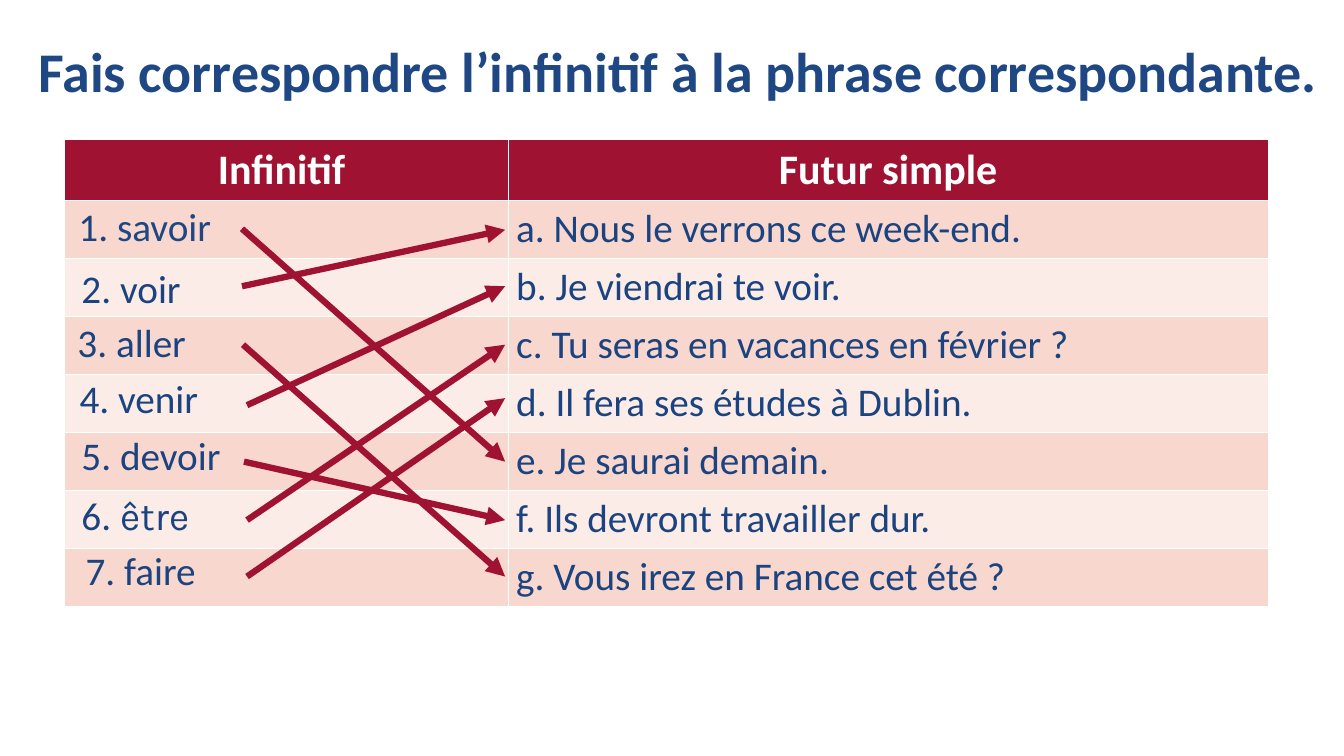
from lxml import etree
from pptx import Presentation
from pptx.dml.color import RGBColor
from pptx.enum.shapes import MSO_CONNECTOR
from pptx.enum.text import MSO_ANCHOR, PP_ALIGN
from pptx.oxml.ns import qn
from pptx.util import Inches, Pt

STRAIGHT = MSO_CONNECTOR.STRAIGHT
MIDDLE = MSO_ANCHOR.MIDDLE
LEFT, CENTER = PP_ALIGN.LEFT, PP_ALIGN.CENTER

COLORS = {
    "title": "1E4783",
    "text": "1A437F",
    "white": "FFFFFF",
    "crimson": "9F1231",
    "odd_row": "F8D7CE",
    "even_row": "FCECE8",
}
FONT = "Calibri"
HEADERS = ["Infinitif ", "Futur simple"]
COLUMN_WIDTHS = [4.4, 7.54]
HEADER_HEIGHT, ROW_HEIGHT = 0.59, 0.57
ARROW_END_X = 5.01

# Number, verb, label left and top, arrow start x and y, matching sentence
VERBS = [
    ("1. ", "savoir", 0.68, 1.96, 2.4, 2.27, "e"),
    ("2. ", "voir", 0.71, 2.57, 2.4, 2.84, "a"),
    ("3. ", "aller", 0.67, 3.11, 2.41, 3.42, "g"),
    ("4. ", "venir", 0.69, 3.66, 2.45, 4.02, "b"),
    ("5. ", "devoir", 0.71, 4.23, 2.42, 4.58, "f"),
    ("6. ", "être", 0.71, 4.83, 2.45, 5.16, "c"),
    ("7. ", "faire", 0.75, 5.37, 2.45, 5.72, "d"),
]
VERB_STYLES = {"savoir": {"color": "title"}, "être": {"font": "Karla"}}

# Sentence and height at which its arrow arrives
SENTENCES = {
    "a": ("Nous le verrons ce week-end.", 2.28),
    "b": ("Je viendrai te voir.", 2.84),
    "c": ("Tu seras en vacances en février ?", 3.42),
    "d": ("Il fera ses études à Dublin.", 3.95),
    "e": ("Je saurai demain.", 4.58),
    "f": ("Ils devront travailler dur.", 5.16),
    "g": ("Vous irez en France cet été ?", 5.72),
}


def rgb(name):
    return RGBColor.from_string(COLORS[name])


def add_span(para, text, size=28, color="text", bold=False, font=FONT):
    span = para.add_run()
    span.text = text
    span.font.name = font
    span.font.size = Pt(size)
    span.font.bold = bold
    span.font.color.rgb = rgb(color)


def set_title(page, text):
    title = page.shapes.title
    title.left, title.top = Inches(0.28), Inches(0.4)
    title.width, title.height = Inches(13.06), Inches(0.68)
    frame = title.text_frame
    frame.word_wrap = True
    frame.vertical_anchor = MIDDLE
    para = frame.paragraphs[0]
    para.alignment = LEFT
    para.line_spacing = 0.9
    add_span(para, text, 40, "title", True)


def fill_cell(cell, color):
    cell.fill.solid()
    cell.fill.fore_color.rgb = rgb(color)
    cell.margin_left = cell.margin_right = Inches(0.08)


def add_matching_table(page):
    table = page.shapes.add_table(
        len(SENTENCES) + 1, len(HEADERS), Inches(0.64), Inches(1.38),
        Inches(sum(COLUMN_WIDTHS)), Inches(HEADER_HEIGHT + len(SENTENCES) * ROW_HEIGHT),
    ).table
    table.rows[0].height = Inches(HEADER_HEIGHT)
    for column, (header, width) in enumerate(zip(HEADERS, COLUMN_WIDTHS)):
        table.columns[column].width = Inches(width)
        cell = table.cell(0, column)
        fill_cell(cell, "crimson")
        para = cell.text_frame.paragraphs[0]
        para.alignment = CENTER
        add_span(para, header, 30, "white", True)
    for row, (letter, (sentence, _)) in enumerate(SENTENCES.items(), start=1):
        table.rows[row].height = Inches(ROW_HEIGHT)
        for column in range(len(HEADERS)):
            fill_cell(table.cell(row, column), "odd_row" if row % 2 else "even_row")
        add_span(table.cell(row, 1).text_frame.paragraphs[0], f"{letter}. {sentence}")


def add_verb(page, number, verb, left, top):
    box = page.shapes.add_textbox(Inches(left), Inches(top), Inches(5.79), Inches(0.57))
    box.text_frame.word_wrap = True
    para = box.text_frame.paragraphs[0]
    add_span(para, number)
    add_span(para, verb, **VERB_STYLES.get(verb, {}))


def add_arrow(page, start_x, start_y, end_y):
    arrow = page.shapes.add_connector(
        STRAIGHT, Inches(start_x), Inches(start_y), Inches(ARROW_END_X), Inches(end_y))
    arrow.line.color.rgb = rgb("crimson")
    arrow.line.width = Pt(4.5)
    etree.SubElement(arrow.line._get_or_add_ln(), qn("a:tailEnd"), type="triangle")
    etree.SubElement(arrow._element.spPr, qn("a:effectLst"))


def main():
    deck = Presentation()
    deck.slide_width, deck.slide_height = Inches(13.33), Inches(7.5)
    page = deck.slides.add_slide(deck.slide_layouts[5])

    # Title and table
    set_title(page, "Fais correspondre l’infinitif à la phrase correspondante.")
    add_matching_table(page)

    # Verbs, then the arrows above them
    for number, verb, left, top, *_ in VERBS:
        add_verb(page, number, verb, left, top)
    for *_, start_x, start_y, letter in VERBS:
        add_arrow(page, start_x, start_y, SENTENCES[letter][1])

    deck.save("out.pptx")


if __name__ == "__main__":
    main()
